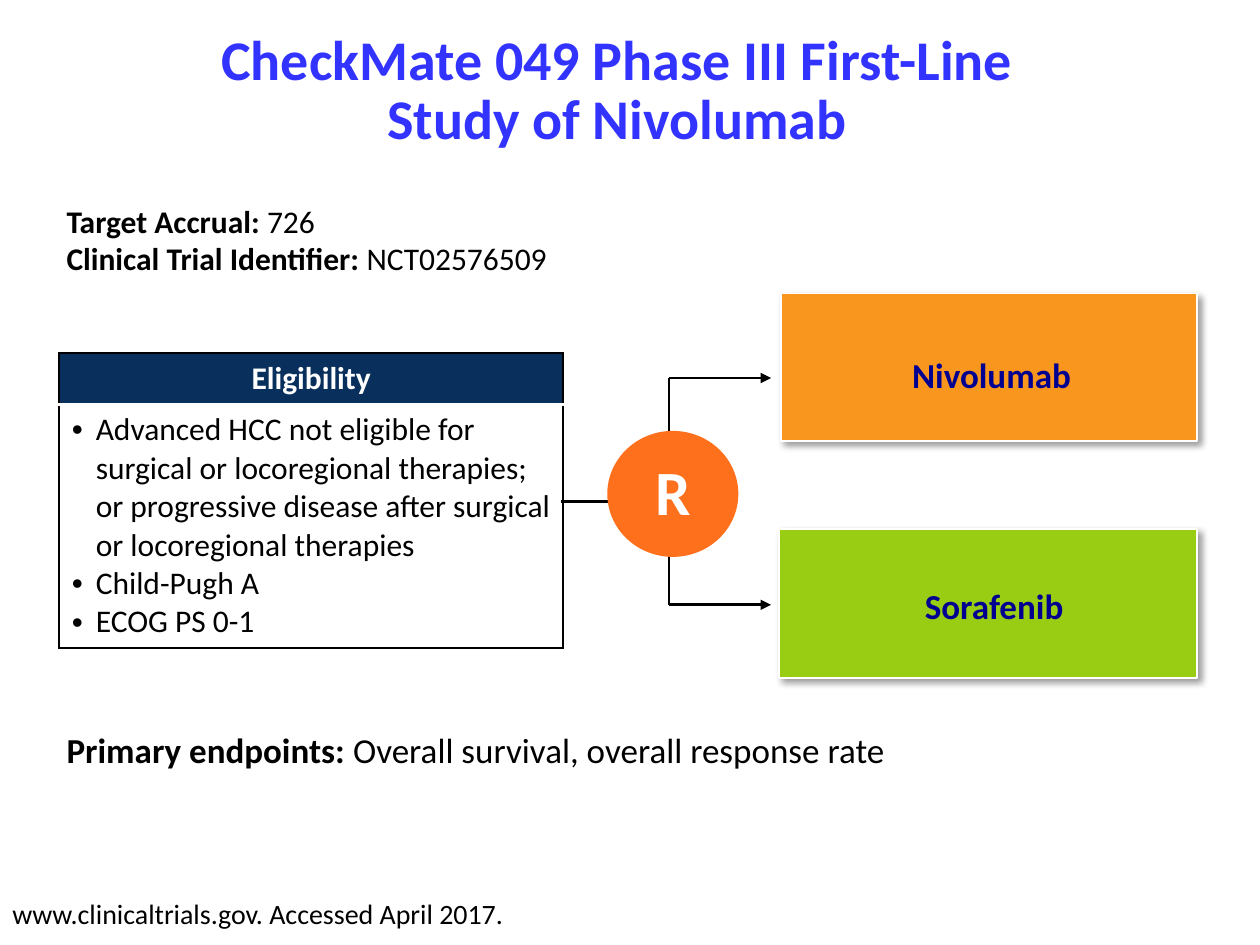
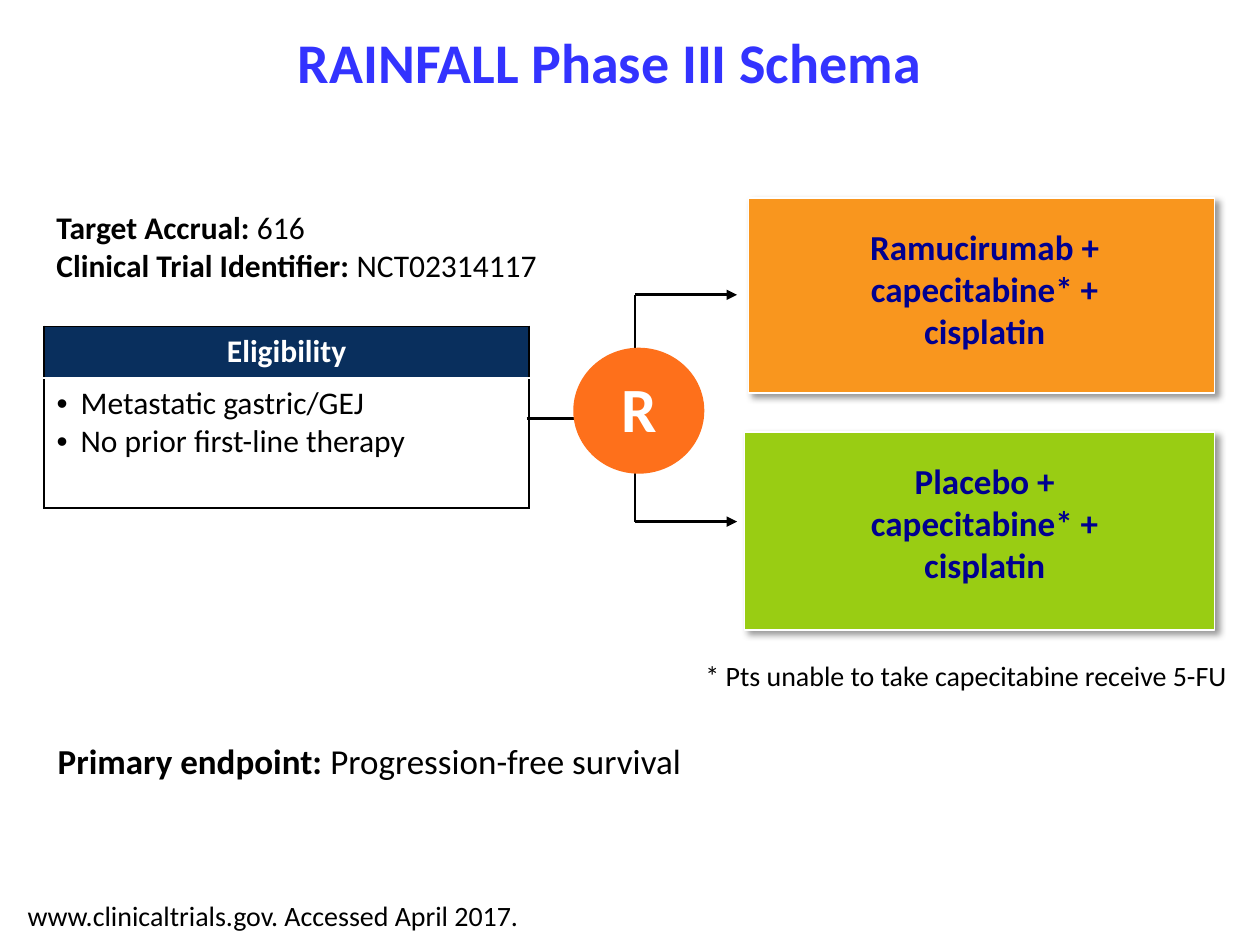
from dataclasses import dataclass

from lxml.etree import SubElement
from pptx import Presentation
from pptx.dml.color import RGBColor
from pptx.enum.shapes import MSO_CONNECTOR as CONN, MSO_SHAPE as SHAPE
from pptx.enum.text import MSO_ANCHOR as ANCHOR, MSO_AUTO_SIZE as FIT, PP_ALIGN as ALIGN
from pptx.oxml import parse_xml
from pptx.oxml.ns import nsdecls, qn
from pptx.util import Inches, Pt

FONT = "Calibri"
BLACK, WHITE = "000000", "FFFFFF"
TITLE_BLUE, HEADER_NAVY, ARM_TEXT = "3333FF", "092F5D", "000090"
CIRCLE_ORANGE = "FE701B"
ARM_FILLS = ("F9961E", "99CD13")
SOURCE = "www.clinicaltrials.gov. Accessed April 2017."
HEADER_H = 0.41

Box = tuple[float, float, float, float]
Point = tuple[float, float]


@dataclass
class Arm:
    box: Box
    label_box: Box
    lines: list[str]


@dataclass
class Trial:
    title: str
    title_box: Box
    facts_box: Box
    accrual: str
    identifier: str
    table_box: Box
    criteria: list[str]
    circle: Point
    arms: list[Arm]
    endpoint_box: Box
    endpoint: tuple[str, str]
    source_box: Box
    note: str = ""


TRIALS = [
    Trial(
        title="CheckMate 049 Phase III First-Line\nStudy of Nivolumab",
        title_box=(0.65, 0.13, 8.5, 1.2),
        facts_box=(0.43, 1.55, 4.34, 0.71),
        accrual="726",
        identifier="NCT02576509",
        table_box=(0.47, 2.8, 4, 2.34),
        criteria=[
            "Advanced HCC not eligible for surgical or locoregional therapies; "
            "or progressive disease after surgical or locoregional therapies",
            "Child-Pugh A",
            "ECOG PS 0-1",
        ],
        circle=(4.82, 3.42),
        arms=[
            Arm((6.2, 2.33, 3.3, 1.17), (6.24, 2.76, 3.26, 0.44), ["Nivolumab"]),
            Arm((6.18, 4.2, 3.32, 1.18), (6.28, 4.59, 3.22, 0.44), ["Sorafenib"]),
        ],
        endpoint_box=(0.43, 5.73, 7.24, 0.77),
        endpoint=("Primary endpoints: ", "Overall survival, overall response rate"),
        source_box=(0, 7.06, 7.68, 0.37),
    ),
    Trial(
        title="RAINFALL Phase III Schema",
        title_box=(0.59, 0.03, 8.5, 0.99),
        facts_box=(0.35, 1.6, 4.34, 0.71),
        accrual="616",
        identifier="NCT02314117",
        table_box=(0.35, 2.59, 3.85, 1.44),
        criteria=["Metastatic gastric/GEJ", "No prior first-line therapy"],
        circle=(4.55, 2.76),
        arms=[
            Arm((5.94, 1.57, 3.7, 1.55), (5.99, 1.74, 3.65, 1.11),
                ["Ramucirumab +", "capecitabine* +", "cisplatin"]),
            Arm((5.91, 3.43, 3.73, 1.57), (5.99, 3.6, 3.65, 1.11),
                ["Placebo +", "capecitabine* +", "cisplatin"]),
        ],
        endpoint_box=(0.36, 5.82, 8.38, 0.44),
        endpoint=("Primary endpoint: ", "Progression-free survival"),
        source_box=(0.12, 7.08, 7.32, 0.37),
        note="* Pts unable to take capecitabine receive 5-FU",
    ),
]


def rgb(value: str) -> RGBColor:
    return RGBColor.from_string(value)


def place(box: Box) -> list[int]:
    return [Inches(v) for v in box]


def style(r, size: float, color: str, bold: bool) -> None:
    r.font.name, r.font.size, r.font.bold = FONT, Pt(size), bold
    r.font.color.rgb = rgb(color)


def write(tf, lines: list[str], size: float, color: str = BLACK,
          bold: bool = False, align=ALIGN.LEFT) -> None:
    tf.text = "\n".join(lines)
    for p in tf.paragraphs:
        p.alignment = align
        for r in p.runs:
            style(r, size, color, bold)


def add_text(s, box: Box, wrap: bool = True):
    tf = s.shapes.add_textbox(*place(box)).text_frame
    tf.word_wrap = wrap
    return tf


def add_facts(s, box: Box, facts: list[tuple[str, str]], size: float) -> None:
    tf = add_text(s, box)
    for i, (label, value) in enumerate(facts):
        p = tf.add_paragraph() if i else tf.paragraphs[0]
        for text, bold in ((label, True), (value, False)):
            r = p.add_run()
            r.text = text
            style(r, size, BLACK, bold)


def add_line(s, start: Point, end: Point, arrow: bool = False) -> None:
    cxn = s.shapes.add_connector(CONN.STRAIGHT, *place((*start, *end)))
    cxn.line.width = Pt(1.5)
    cxn.line.color.rgb = rgb(BLACK)
    if arrow:
        SubElement(cxn.line._get_or_add_ln(), qn("a:tailEnd"), type="triangle")
    SubElement(cxn._element.spPr, qn("a:effectLst"))


def add_shape(s, kind, box: Box, fill: str):
    sp = s.shapes.add_shape(kind, *place(box))
    sp.shadow.inherit = False
    sp.fill.solid()
    sp.fill.fore_color.rgb = rgb(fill)
    sp.line.fill.background()
    return sp


def add_title(s, trial: Trial) -> None:
    sp = s.shapes.title
    sp.left, sp.top, sp.width, sp.height = place(trial.title_box)
    tf = sp.text_frame
    tf.auto_size = FIT.NONE
    tf.vertical_anchor = ANCHOR.MIDDLE
    tf.margin_left = tf.margin_top = tf.margin_right = tf.margin_bottom = 0
    write(tf, trial.title.split("\n"), 32, TITLE_BLUE, True, ALIGN.CENTER)
    for p in tf.paragraphs:
        p.line_spacing = 0.88


def set_borders(cell, top: str, bottom: str) -> None:
    tc_pr = cell._tc.get_or_add_tcPr()
    for side, color in (("L", BLACK), ("R", BLACK), ("T", top), ("B", bottom)):
        width = Pt(1.5 if color == WHITE else 1)
        tc_pr.append(parse_xml(
            f'<a:ln{side} {nsdecls("a")} w="{width}"><a:solidFill>'
            f'<a:srgbClr val="{color}"/></a:solidFill></a:ln{side}>'))


def add_eligibility(s, trial: Trial) -> None:
    table = s.shapes.add_table(2, 1, *place(trial.table_box)).table
    table.first_row = table.horz_banding = False
    table.rows[0].height = Inches(HEADER_H)
    table.rows[1].height = Inches(trial.table_box[3] - HEADER_H)
    head, body = table.cell(0, 0), table.cell(1, 0)

    set_borders(head, BLACK, WHITE)
    head.fill.solid()
    head.fill.fore_color.rgb = rgb(HEADER_NAVY)
    head.vertical_anchor = ANCHOR.MIDDLE
    write(head.text_frame, ["Eligibility"], 18, WHITE, True, ALIGN.CENTER)

    set_borders(body, WHITE, BLACK)
    body.fill.background()
    write(body.text_frame, trial.criteria, 18)
    for p in body.text_frame.paragraphs:
        p_pr = p._p.get_or_add_pPr()
        p_pr.set("marL", str(Inches(0.19)))
        p_pr.set("indent", str(-Inches(0.19)))
        SubElement(p_pr, qn("a:buFont"), typeface="Arial")
        SubElement(p_pr, qn("a:buChar"), char="•")


def add_randomisation(s, trial: Trial) -> None:
    x, y = trial.circle
    table_right = trial.table_box[0] + trial.table_box[2]
    stem, tip = x + 0.49, x + 1.3
    upper, lower = y - 0.42, y + 1.38
    add_line(s, (table_right - 0.02, y + 0.56), (x + 0.33, y + 0.56))
    add_line(s, (stem, lower), (stem, upper))
    for level in (upper, lower):
        add_line(s, (stem, level), (tip, level), arrow=True)
    tf = add_shape(s, SHAPE.OVAL, (x, y, 1.04, 1), CIRCLE_ORANGE).text_frame
    tf.margin_left = tf.margin_top = tf.margin_right = 0
    tf.margin_bottom = Inches(0.05)
    tf.vertical_anchor = ANCHOR.MIDDLE
    write(tf, ["R"], 36, WHITE, True, ALIGN.CENTER)


def add_arm(s, arm: Arm, fill: str) -> None:
    sp = add_shape(s, SHAPE.RECTANGLE, arm.box, fill)
    sp.line.color.rgb = rgb(WHITE)
    sp.line.width = Pt(1)
    effects = sp._element.spPr.find(qn("a:effectLst"))
    effects.append(parse_xml(
        f'<a:outerShdw {nsdecls("a")} blurRad="{Pt(4)}" dist="{Pt(3)}" '
        f'dir="2700000" algn="tl" rotWithShape="0"><a:srgbClr val="{BLACK}">'
        '<a:alpha val="40000"/></a:srgbClr></a:outerShdw>'))
    write(add_text(s, arm.label_box), arm.lines, 20, ARM_TEXT, True, ALIGN.CENTER)


def add_trial(prs, trial: Trial) -> None:
    s = prs.slides.add_slide(prs.slide_layouts[5])
    add_title(s, trial)
    add_eligibility(s, trial)
    add_randomisation(s, trial)
    for arm, fill in zip(trial.arms, ARM_FILLS):
        add_arm(s, arm, fill)
    add_facts(s, trial.facts_box, [
        ("Target Accrual: ", trial.accrual),
        ("Clinical Trial Identifier: ", trial.identifier),
    ], 18)
    add_facts(s, trial.endpoint_box, [trial.endpoint], 20)
    tf = add_text(s, trial.source_box)
    tf.vertical_anchor = ANCHOR.BOTTOM
    write(tf, [SOURCE], 16)
    if trial.note:
        write(add_text(s, (5.5, 5.18, 4.39, 0.37), wrap=False), [trial.note], 16)


def main() -> None:
    prs = Presentation()
    prs.slide_width, prs.slide_height = Inches(10), Inches(7.5)
    for trial in TRIALS:
        add_trial(prs, trial)
    prs.save("out.pptx")


if __name__ == "__main__":
    main()
